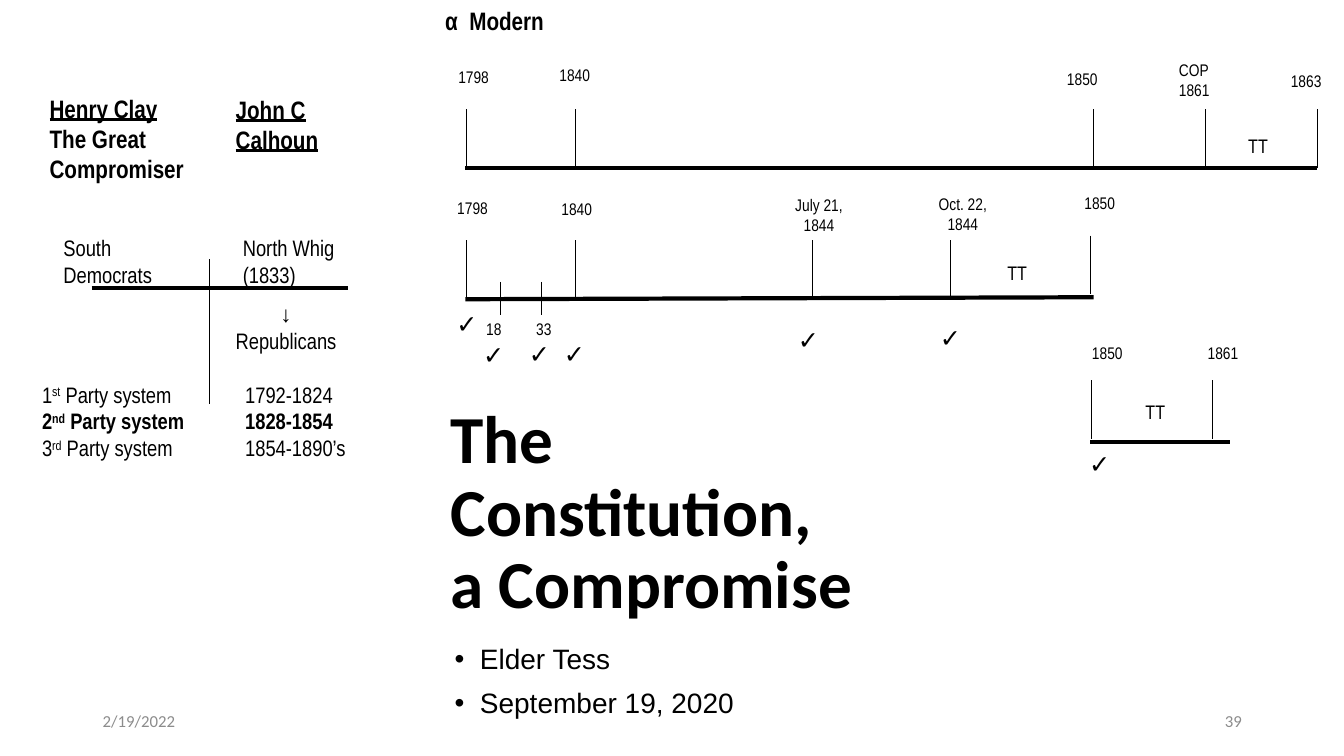
from lxml import etree
from pptx import Presentation
from pptx.dml.color import RGBColor
from pptx.enum.shapes import MSO_CONNECTOR
from pptx.enum.text import MSO_ANCHOR, MSO_AUTO_SIZE, PP_ALIGN
from pptx.oxml.ns import qn
from pptx.util import Cm, Pt

LEFT, CENTER, RIGHT = PP_ALIGN.LEFT, PP_ALIGN.CENTER, PP_ALIGN.RIGHT
TOP, MIDDLE, BOTTOM = MSO_ANCHOR.TOP, MSO_ANCHOR.MIDDLE, MSO_ANCHOR.BOTTOM
STRAIGHT, NO_FIT = MSO_CONNECTOR.STRAIGHT, MSO_AUTO_SIZE.NONE
BLACK, GREY = "000000", "8C8C8C"
NARROW = "Arial Narrow"
LAYOUT_TITLE_AND_CONTENT = 1

AXES = [
    (11.73, 4.24, 33.2, 4.24),
    (11.73, 7.54, 27.56, 7.49),
    (27.48, 11.13, 30.99, 11.13),
    (2.31, 7.26, 8.76, 7.26),
]
TICKS = [
    (2.76, 4.24, [11.76, 14.5, 27.56, 30.38, 33.2]),
    (6.06, 7.54, [11.76, 14.5, 20.47, 23.95]),
    (5.94, 7.42, [27.48]),
    (7.1, 7.94, [12.62, 13.64]),
    (9.58, 11.05, [27.51, 30.56]),
    (6.53, 10.19, [5.28]),
]
DATES = [
    (["1798"], 11.3, 1.55, 1.7, LEFT),
    (["1840"], 13.67, 1.5, 1.63, CENTER),
    (["1850"], 26.64, 1.61, 1.63, LEFT),
    (["COP", "1861"], 29.46, 1.37, 1.63, LEFT),
    (["1863"], 32.28, 1.65, 1.57, LEFT),
    (["1798"], 11.2, 4.85, 1.42, CENTER),
    (["1840"], 13.72, 4.88, 1.63, CENTER),
    (["July 21,", "1844"], 19.61, 4.77, 2.06, CENTER),
    (["Oct. 22,", "1844"], 23.06, 4.76, 2.41, CENTER),
    (["1850"], 26.9, 4.72, 1.63, CENTER),
    (["18"], 11.76, 7.9, 1.37, CENTER),
    (["33"], 13.03, 7.9, 1.35, CENTER),
    (["1850"], 26.8, 8.51, 2.21, CENTER),
    (["1861"], 29.97, 8.51, 1.7, CENTER),
]
TT_MARKS = [(30.89, 3.25), (24.82, 6.45), (28.3, 9.96)]
CHECKS = [(11.23, 7.65), (11.91, 8.43), (13.06, 8.41), (13.94, 8.41),
          (19.84, 8.05), (23.42, 8.0), (27.18, 11.18)]
PARTIES = [
    (["South", "Democrats"], 1.35, 5.78, 3.58, LEFT),
    (["North Whig (1833)"], 5.87, 5.78, 4.01, LEFT),
    (["↓", "Republicans"], 5.66, 7.44, 3.1, CENTER),
]
PARTY_SYSTEMS = [
    ("1", "st", "1792-1824", False),
    ("2", "nd", "1828-1854", True),
    ("3", "rd", "1854-1890’s", False),
]


def rgb(value):
    """Turn a hex string into a colour."""
    return RGBColor.from_string(value)


def add_run(paragraph, text, size, font=NARROW, color=BLACK, bold=False,
            underline=False, superscript=False):
    """Add one formatted run to a paragraph."""
    run = paragraph.add_run()
    run.text = text
    run.font.name, run.font.size = font, Pt(size)
    run.font.bold, run.font.underline = bold, underline
    run.font.color.rgb = rgb(color)
    if superscript:
        run.font._element.set("baseline", "30000")


def add_paragraphs(frame, count, align=LEFT):
    """Return the given number of aligned paragraphs of an empty frame."""
    paragraphs = [frame.paragraphs[0]]
    paragraphs += [frame.add_paragraph() for _ in range(count - 1)]
    for paragraph in paragraphs:
        paragraph.alignment = align
    return paragraphs


def add_tab_stop(paragraph, position):
    """Give a paragraph one left tab stop."""
    stops = etree.SubElement(paragraph._p.get_or_add_pPr(), qn("a:tabLst"))
    stop = etree.SubElement(stops, qn("a:tab"))
    stop.set("pos", str(Cm(position)))
    stop.set("algn", "l")


def add_frame(slide, left, top, width, height, anchor=TOP):
    """Add a wrapping text box and return its text frame."""
    box = slide.shapes.add_textbox(Cm(left), Cm(top), Cm(width), Cm(height))
    box.text_frame.word_wrap = True
    box.text_frame.vertical_anchor = anchor
    return box.text_frame


def add_label(slide, lines, left, top, width, size, align=LEFT, height=None,
              anchor=TOP, **style):
    """Add a text box with one paragraph per line."""
    height = height or round(0.25 + len(lines) * size * 0.042, 2)
    frame = add_frame(slide, left, top, width, height, anchor)
    for paragraph, line in zip(add_paragraphs(frame, len(lines), align), lines):
        add_run(paragraph, line, size, **style)


def add_line(slide, x1, y1, x2, y2, weight):
    """Add a black straight line without a shadow."""
    line = slide.shapes.add_connector(STRAIGHT, Cm(x1), Cm(y1), Cm(x2), Cm(y2))
    line.line.color.rgb = rgb(BLACK)
    line.line.width = Pt(weight)
    etree.SubElement(line._element.spPr, qn("a:effectLst"))


def place(placeholder, left, top, width, height, anchor):
    """Move a placeholder and return its text frame."""
    placeholder.left, placeholder.top = Cm(left), Cm(top)
    placeholder.width, placeholder.height = Cm(width), Cm(height)
    frame = placeholder.text_frame
    frame.word_wrap, frame.auto_size = True, NO_FIT
    frame.vertical_anchor = anchor
    return frame


def add_title(slide):
    """Fill the title placeholder."""
    frame = place(slide.shapes.title, 11.1, 11.51, 11.18, 4.32, BOTTOM)
    heading, = add_paragraphs(frame, 1)
    heading.line_spacing = 0.9
    add_run(heading, "The Constitution,", 48, "Calibri", bold=True)
    heading.add_line_break()
    add_run(heading, "a Compromise", 48, "Calibri", bold=True)


def add_byline(slide):
    """Fill the body placeholder with the bulleted speaker and date."""
    frame = place(slide.placeholders[1], 11.2, 16.13, 11.18, 2.21, TOP)
    lines = ["Elder Tess", "September 19, 2020"]
    for paragraph, line in zip(add_paragraphs(frame, len(lines)), lines):
        paragraph.line_spacing, paragraph.space_before = 0.9, Pt(10)
        properties = paragraph._p.get_or_add_pPr()
        properties.set("marL", str(Cm(0.64)))
        properties.set("indent", str(Cm(-0.64)))
        etree.SubElement(properties, qn("a:buChar")).set("char", "•")
        add_run(paragraph, line, 20, "Arial")


def add_party_systems(slide):
    """List the party systems with their years at a tab stop."""
    frame = add_frame(slide, 0.81, 9.47, 8.76, 2.31)
    rows = zip(add_paragraphs(frame, len(PARTY_SYSTEMS)), PARTY_SYSTEMS)
    for paragraph, (number, suffix, years, bold) in rows:
        add_tab_stop(paragraph, 5.12)
        add_run(paragraph, number, 16, bold=bold)
        add_run(paragraph, suffix, 16, bold=bold, superscript=True)
        add_run(paragraph, f" Party system\t{years}", 16, bold=bold)


def add_statesmen(slide):
    """Name the two statesmen above the party table."""
    frame = add_frame(slide, 1, 2.22, 4.34, 2.57)
    name, epithet = add_paragraphs(frame, 2)
    add_run(name, "Henry Clay", 18, bold=True, underline=True)
    add_run(epithet, "The Great Compromiser", 18, bold=True)
    add_label(slide, ["John C", "Calhoun"], 5.69, 2.24, 4.34, 18,
              bold=True, underline=True)


def main():
    """Build the slide and save it."""
    deck = Presentation()
    deck.slide_width, deck.slide_height = Cm(33.87), Cm(19.05)
    slide = deck.slides.add_slide(deck.slide_layouts[LAYOUT_TITLE_AND_CONTENT])
    add_title(slide)
    add_byline(slide)
    footer = {"size": 12, "height": 1.02, "anchor": MIDDLE,
              "font": "Calibri", "color": GREY}
    add_label(slide, ["2/19/2022"], 2.34, 17.65, 7.62, **footer)
    add_label(slide, ["39"], 23.93, 17.65, 7.62, align=RIGHT, **footer)
    add_statesmen(slide)
    add_label(slide, ["α  Modern"], 10.97, 0, 4.6, 18, bold=True)
    for axis in AXES:
        add_line(slide, *axis, 3)
    for top, bottom, positions in TICKS:
        for x in positions:
            add_line(slide, x, top, x, bottom, 0.75)
    for lines, left, top, width, align in DATES:
        add_label(slide, lines, left, top, width, 12, align)
    for left, top in TT_MARKS:
        add_label(slide, ["TT"], left, top, 1.63, 14, CENTER)
    for lines, left, top, width, align in PARTIES:
        add_label(slide, lines, left, top, width, 16, align)
    add_party_systems(slide)
    for left, top in CHECKS:
        add_label(slide, ["✓"], left, top, 1.07, 18, CENTER, bold=True)
    deck.save("out.pptx")


if __name__ == "__main__":
    main()
